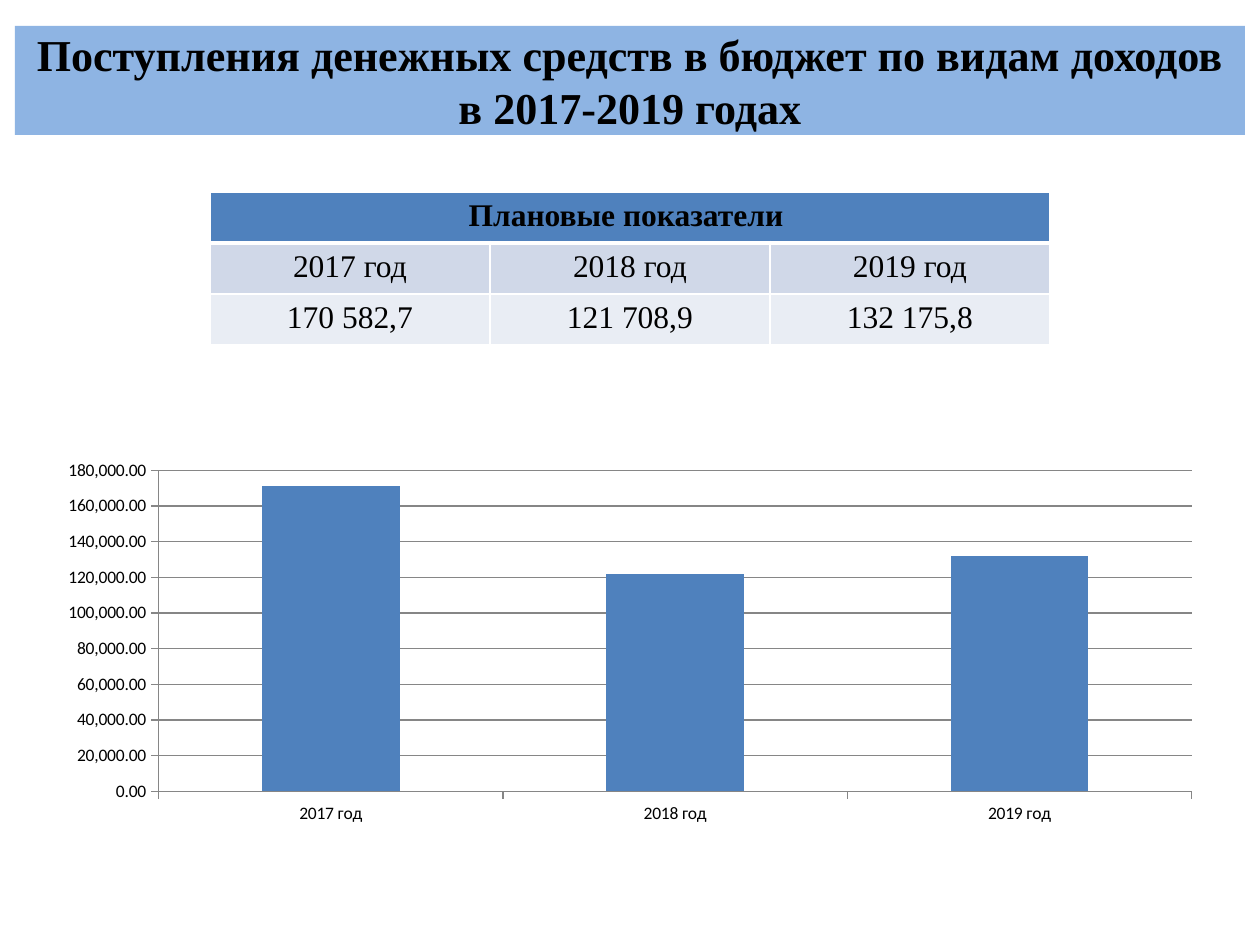
from dataclasses import dataclass

import lxml.etree
import pptx
import pptx.chart.data
import pptx.dml.color
import pptx.enum.chart
import pptx.enum.text
import pptx.oxml.ns
import pptx.slide
import pptx.table
import pptx.text.text
import pptx.util

EMU_PER_PX = 914400 / 126


@dataclass(frozen=True)
class Theme:
    serif: str = "Times New Roman"
    sans: str = "Calibri"
    text: str = "000000"
    banner: str = "8EB4E3"
    accent: str = "4F81BD"
    band_dark: str = "D0D8E8"
    band_light: str = "E9EDF4"
    border: str = "FFFFFF"
    axis: str = "868686"
    title_size: float = 25.2
    table_size: int = 18
    chart_size: int = 10


@dataclass(frozen=True)
class Box:
    left: int
    top: int
    width: int
    height: int

    def emu(self) -> list[pptx.util.Emu]:
        return [px(v) for v in (self.left, self.top, self.width, self.height)]


@dataclass(frozen=True)
class YearIncome:
    year: str
    amount: float

    def amount_text(self) -> str:
        return f"{self.amount:,.1f}".replace(",", " ").replace(".", ",")


THEME = Theme()
TITLE_LINES = ("Поступления денежных средств в бюджет по видам доходов", "в 2017-2019 годах")
TABLE_HEADING = "Плановые показатели "
INCOMES = (
    YearIncome("2017 год", 170582.7),
    YearIncome("2018 год", 121708.9),
    YearIncome("2019 год", 132175.8),
)


def px(value: int) -> pptx.util.Emu:
    return pptx.util.Emu(round(value * EMU_PER_PX))


def rgb(value: str) -> pptx.dml.color.RGBColor:
    return pptx.dml.color.RGBColor.from_string(value)


def set_font(font: pptx.text.text.Font, name: str, size: float, bold: bool = False) -> None:
    font.name = name
    font.size = pptx.util.Pt(size)
    font.bold = bold
    font.color.rgb = rgb(THEME.text)


def add_title(s: pptx.slide.Slide, box: Box) -> None:
    sp = s.shapes.title
    sp.left, sp.top, sp.width, sp.height = box.emu()
    sp.fill.solid()
    sp.fill.fore_color.rgb = rgb(THEME.banner)
    tf = sp.text_frame
    tf.word_wrap = True
    tf.auto_size = pptx.enum.text.MSO_AUTO_SIZE.NONE
    tf.vertical_anchor = pptx.enum.text.MSO_ANCHOR.MIDDLE
    p = tf.paragraphs[0]
    p.alignment = pptx.enum.text.PP_ALIGN.CENTER
    set_font(p.font, THEME.serif, THEME.title_size, bold=True)
    for i, line in enumerate(TITLE_LINES):
        if i:
            p.add_line_break()
        p.add_run().text = line


def set_borders(cell: pptx.table._Cell, top: int, bottom: int) -> None:
    """Draw the four cell edges; top and bottom widths are in points."""
    qn = pptx.oxml.ns.qn
    props = cell._tc.get_or_add_tcPr()
    edges = (("a:lnL", 1), ("a:lnR", 1), ("a:lnT", top), ("a:lnB", bottom))
    for i, (tag, width) in enumerate(edges):
        line = lxml.etree.Element(qn(tag), w=str(pptx.util.Pt(width)))
        fill = lxml.etree.SubElement(line, qn("a:solidFill"))
        lxml.etree.SubElement(fill, qn("a:srgbClr"), val=THEME.border)
        props.insert(i, line)


def add_income_table(s: pptx.slide.Slide, box: Box) -> None:
    rows = (
        ([TABLE_HEADING] + [""] * (len(INCOMES) - 1), THEME.accent),
        ([item.year for item in INCOMES], THEME.band_dark),
        ([item.amount_text() for item in INCOMES], THEME.band_light),
    )
    table = s.shapes.add_table(len(rows), len(INCOMES), *box.emu()).table
    for i, (texts, fill) in enumerate(rows):
        for j, text in enumerate(texts):
            cell = table.cell(i, j)
            cell.fill.solid()
            cell.fill.fore_color.rgb = rgb(fill)
            set_borders(cell, top=3 if i == 1 else 1, bottom=3 if i == 0 else 1)
            p = cell.text_frame.paragraphs[0]
            p.text = text
            p.alignment = pptx.enum.text.PP_ALIGN.CENTER
            set_font(p.font, THEME.serif, THEME.table_size, bold=i == 0)
    table.cell(0, 0).merge(table.cell(0, len(INCOMES) - 1))


def add_income_chart(s: pptx.slide.Slide, box: Box) -> None:
    data = pptx.chart.data.CategoryChartData(number_format="#,##0.00")
    data.categories = [item.year for item in INCOMES]
    data.add_series("Series 1", [round(item.amount, -3) for item in INCOMES])
    kind = pptx.enum.chart.XL_CHART_TYPE.COLUMN_CLUSTERED
    chart = s.shapes.add_chart(kind, *box.emu(), data).chart
    chart.has_title = False
    chart.has_legend = False
    set_font(chart.font, THEME.sans, THEME.chart_size)

    plot = chart.plots[0]
    plot.gap_width = 150
    plot.vary_by_categories = False
    fill = plot.series[0].format.fill
    fill.solid()
    fill.fore_color.rgb = rgb(THEME.accent)

    value_axis = chart.value_axis
    value_axis.minimum_scale = 0
    value_axis.maximum_scale = 180000
    value_axis.major_unit = 20000
    value_axis.has_major_gridlines = True
    value_axis.tick_labels.number_format = "#,##0.00"
    value_axis.tick_labels.number_format_is_linked = False
    for axis in (value_axis, chart.category_axis):
        axis.major_tick_mark = pptx.enum.chart.XL_TICK_MARK.OUTSIDE
    for part in (value_axis, chart.category_axis, value_axis.major_gridlines):
        part.format.line.color.rgb = rgb(THEME.axis)
        part.format.line.width = pptx.util.Pt(0.75)


def main() -> None:
    prs = pptx.Presentation()
    prs.slide_width, prs.slide_height = px(1260), px(945)
    s = prs.slides.add_slide(prs.slide_layouts.get_by_name("Title Only"))
    add_title(s, Box(15, 26, 1230, 109))
    add_income_table(s, Box(210, 192, 840, 153))
    add_income_chart(s, Box(45, 453, 1170, 378))
    prs.save("out.pptx")


if __name__ == "__main__":
    main()
